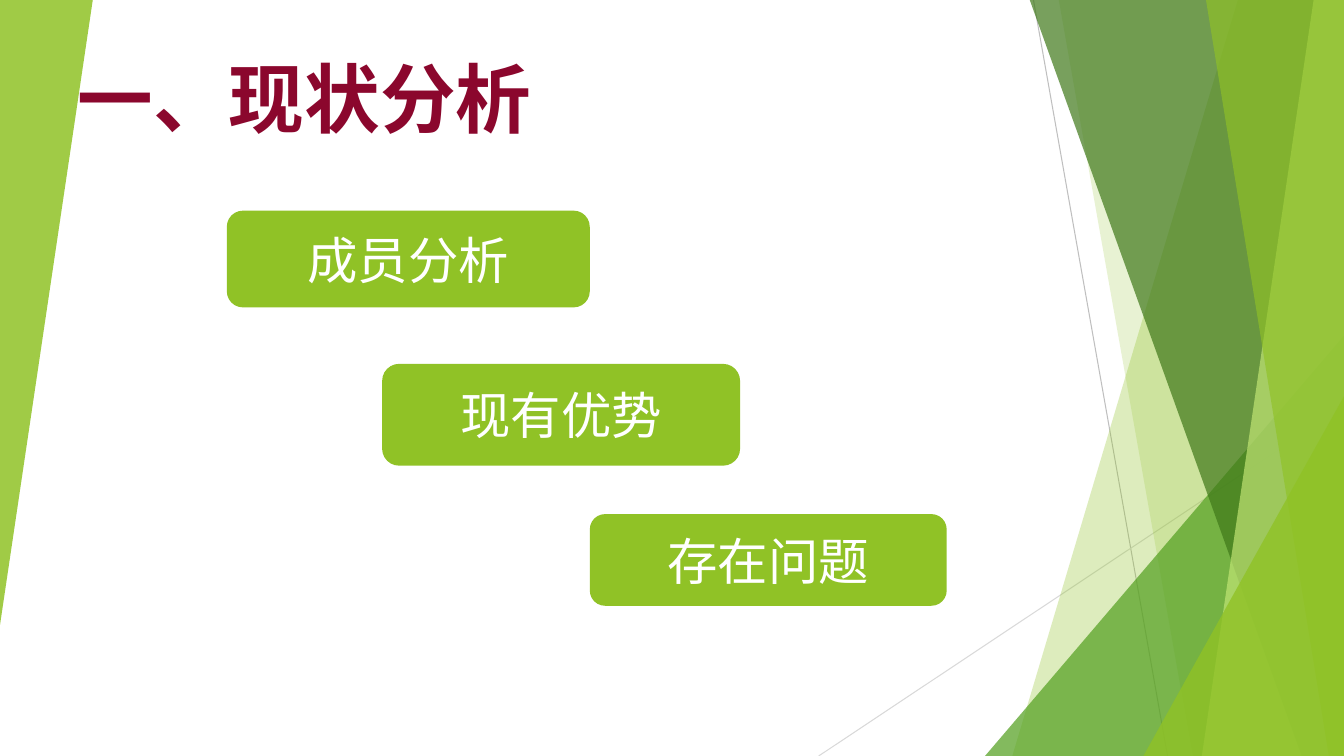
import pptx
import pptx.dml.color
import pptx.enum.lang
import pptx.enum.shapes
import pptx.enum.text
import pptx.oxml.ns
import pptx.util
from lxml import etree
from pptx.util import Inches

THEME = {
    "lime": "90C226", "green": "54A021", "forest": "3F7819", "pale": "C0E474",
    "maroon": "8B072D", "white": "FFFFFF", "gray": "BFBFBF", "light_gray": "D9D9D9",
    "title_size": 54, "label_size": 36, "title_font": "Arial", "label_font": "Lato",
}
SHAPES = pptx.enum.shapes.MSO_SHAPE
ANCHORS = pptx.enum.text.MSO_ANCHOR
ALIGNMENTS = pptx.enum.text.PP_ALIGN
qn = pptx.oxml.ns.qn


def fill_shape(shape, color, opacity=100):
    shape.shadow.inherit = False
    shape.line.fill.background()
    shape.fill.solid()
    shape.fill.fore_color.rgb = pptx.dml.color.RGBColor.from_string(THEME[color])
    if opacity < 100:
        color_element = shape.element.spPr.find(".//" + qn("a:srgbClr"))
        etree.SubElement(color_element, qn("a:alpha"), val=str(opacity * 1000))


def write_text(shape, text, anchor, alignment, font_values):
    frame = shape.text_frame
    frame.text = text
    frame.word_wrap = True
    frame.auto_size = pptx.enum.text.MSO_AUTO_SIZE.NONE
    frame.vertical_anchor = anchor
    paragraph = frame.paragraphs[0]
    paragraph.alignment = alignment
    font = paragraph.runs[0].font
    for name, value in font_values.items():
        setattr(font, name, value)
    font.language_id = pptx.enum.lang.MSO_LANGUAGE_ID.SIMPLIFIED_CHINESE


presentation = pptx.Presentation()
presentation.slide_width = Inches(13.33)
presentation.slide_height = Inches(7.5)
slide = presentation.slides.add_slide(presentation.slide_layouts[5])
shapes = slide.shapes

# Thin lines behind the facets
for start_x, start_y, end_x, color in [(10.25, 0, 11.58, "gray"), (13.33, 4.03, 8.12, "light_gray")]:
    line = shapes.add_connector(pptx.enum.shapes.MSO_CONNECTOR.STRAIGHT, Inches(start_x),
                                Inches(start_y), Inches(end_x), Inches(7.5))
    line.line.color.rgb = pptx.dml.color.RGBColor.from_string(THEME[color])
    line.line.width = pptx.util.Pt(0.75)
    etree.SubElement(line.element.spPr, qn("a:effectLst"))

# Right-hand facets, back to front: a band has its top and bottom left corner,
# a triangle its left and top; all reach the right and bottom edges
facets = [
    ("band", 12.28, 10.04, "lime", 30),
    ("band", 10.5, 11.83, "lime", 20),
    ("triangle", 9.77, 3.33, "green", 72),
    ("band", 10.21, 12.91, "forest", 70),
    ("band", 13.03, 11.92, "pale", 70),
    ("band", 11.96, 13.18, "lime", 65),
    ("triangle", 11.34, 3.93, "lime", 80),
]
for kind, first, second, color, opacity in facets:
    if kind == "band":
        builder = shapes.build_freeform(Inches(first), Inches(-0.01))
        corners = [(13.33, -0.01), (13.33, 7.5), (second, 7.5)]
        builder.add_line_segments([(Inches(x), Inches(y)) for x, y in corners], close=True)
        facet = builder.convert_to_shape()
    else:
        facet = shapes.add_shape(SHAPES.ISOSCELES_TRIANGLE, Inches(first), Inches(second),
                                 Inches(13.33 - first), Inches(7.5 - second))
        facet.adjustments[0] = 1
    fill_shape(facet, color, opacity)

# Left wedge
wedge = shapes.add_shape(SHAPES.ISOSCELES_TRIANGLE, 0, 0, Inches(0.92), Inches(6.2))
wedge.adjustments[0] = 1
wedge.rotation = 180
fill_shape(wedge, "lime", 85)

# Title, brought in front of the facets
title = shapes.title
title.left, title.top, title.width, title.height = map(Inches, (0.67, 0.7, 12.09, 0.77))
title.element.getparent().append(title.element)
write_text(title, "一、现状分析", ANCHORS.BOTTOM, ALIGNMENTS.LEFT, {
    "name": THEME["title_font"], "size": pptx.util.Pt(THEME["title_size"]), "bold": True})
title.text_frame.paragraphs[0].runs[0].font.color.rgb = (
    pptx.dml.color.RGBColor.from_string(THEME["maroon"]))

# Stepped topic boxes
topics = [
    ("成员分析", 2.25, 2.09, 3.6, 0.96),
    ("现有优势", 3.79, 3.61, 3.55, 1.01),
    ("存在问题", 5.85, 5.1, 3.54, 0.91),
]
for text, *box in topics:
    topic = shapes.add_shape(SHAPES.ROUNDED_RECTANGLE, *map(Inches, box))
    fill_shape(topic, "lime")
    write_text(topic, text, ANCHORS.MIDDLE, ALIGNMENTS.CENTER, {
        "name": THEME["label_font"], "size": pptx.util.Pt(THEME["label_size"])})
    topic.text_frame.paragraphs[0].runs[0].font.color.rgb = (
        pptx.dml.color.RGBColor.from_string(THEME["white"]))

presentation.save("out.pptx")
